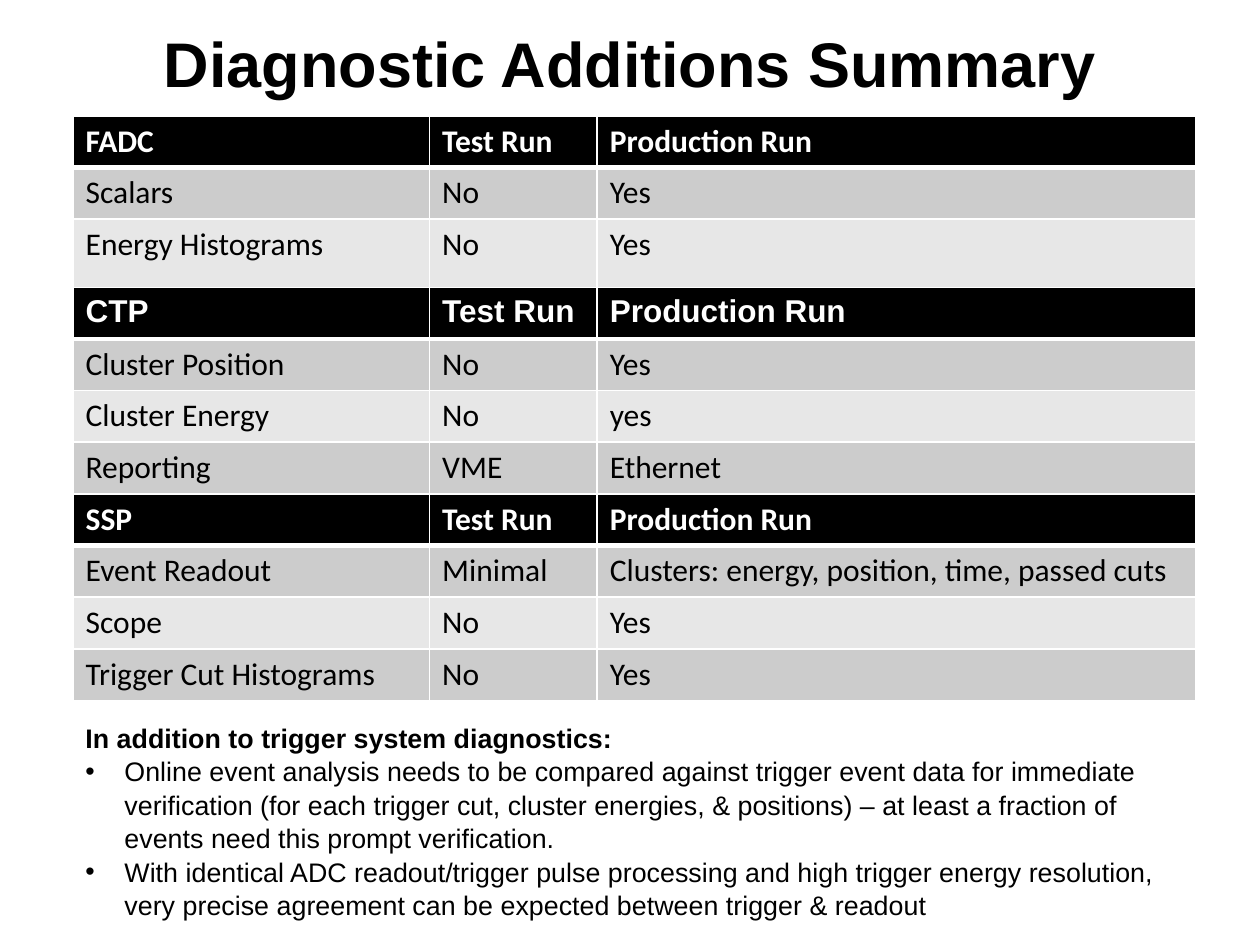
from pptx import Presentation
from pptx.dml.color import RGBColor
from pptx.enum import text
from pptx.oxml import parse_xml
from pptx.oxml.ns import nsdecls
from pptx.util import Inches, Pt

BLACK = RGBColor(0, 0, 0)
WHITE = RGBColor(255, 255, 255)
BANDS = [RGBColor(0xCC, 0xCC, 0xCC), RGBColor(0xE7, 0xE7, 0xE7)]

# Content
TITLE = "Diagnostic Additions Summary"
RUNS = ("Test Run", "Production Run")
# top, header font, last row height, rows
TABLES = [
    (0.92, "Calibri", 0.69, [
        ("FADC", *RUNS),
        ("Scalars", "No", "Yes"),
        ("Energy Histograms", "No", "Yes")]),
    (2.28, "Arial", 0.41, [
        ("CTP", *RUNS),
        ("Cluster Position", "No", "Yes"),
        ("Cluster Energy", "No", "yes"),
        ("Reporting", "VME", "Ethernet")]),
    (3.92, "Calibri", 0.41, [
        ("SSP", *RUNS),
        ("Event Readout", "Minimal", "Clusters: energy, position, time, passed cuts"),
        ("Scope", "No", "Yes"),
        ("Trigger Cut Histograms", "No", "Yes")]),
]
NOTE_HEAD = "In addition to trigger system diagnostics:"
NOTES = [
    "Online event analysis needs to be compared against trigger event data for "
    "immediate verification (for each trigger cut, cluster energies, & positions) "
    "– at least a fraction of events need this prompt verification.",
    "With identical ADC readout/trigger pulse processing and high trigger energy "
    "resolution, very precise agreement can be expected between trigger & readout",
]
LEFT = 0.58
COLS = [2.83, 1.33, 4.75]
ROW_H = 0.41


def style(font, name, size, color, bold):
    font.name, font.size, font.bold = name, Pt(size), bold
    font.color.rgb = color


def add_borders(cell, top, bottom):
    tcPr = cell._tc.get_or_add_tcPr()
    for side, width in (("L", 1), ("R", 1), ("T", top), ("B", bottom)):
        tcPr.append(parse_xml(
            f'<a:ln{side} {nsdecls("a")} w="{Pt(width)}"><a:solidFill>'
            f'<a:srgbClr val="{WHITE}"/></a:solidFill></a:ln{side}>'))


def add_summary_table(s, top, head_font, last_h, rows):
    heights = [ROW_H] * (len(rows) - 1) + [last_h]
    frame = s.shapes.add_table(len(rows), len(COLS), Inches(LEFT), Inches(top),
                               Inches(sum(COLS)), Inches(sum(heights)))
    table = frame.table
    for col, width in zip(table.columns, COLS):
        col.width = Inches(width)
    for i, values in enumerate(rows):
        table.rows[i].height = Inches(heights[i])
        head = i == 0
        for j, value in enumerate(values):
            cell = table.cell(i, j)
            # The thick rule lies between header and first data row
            add_borders(cell, 3 if i == 1 else 1, 3 if head else 1)
            cell.fill.solid()
            cell.fill.fore_color.rgb = BLACK if head else BANDS[(i - 1) % 2]
            cell.text_frame.text = value
            style(cell.text_frame.paragraphs[0].runs[0].font,
                  head_font if head else "Calibri", 18,
                  WHITE if head else BLACK, head)


def add_bullet(p):
    pPr = p._p.get_or_add_pPr()
    pPr.set("marL", str(Inches(0.31)))
    pPr.set("indent", str(Inches(-0.31)))
    pPr.append(parse_xml(f'<a:buFont {nsdecls("a")} typeface="Arial"/>'))
    pPr.append(parse_xml(f'<a:buChar {nsdecls("a")} char="•"/>'))


prs = Presentation()
prs.slide_width, prs.slide_height = Inches(10), Inches(7.5)
s = prs.slides.add_slide(prs.slide_layouts[5])

# Title
title = s.shapes.title
title.left, title.top = Inches(0.75), Inches(0.08)
title.width, title.height = Inches(8.5), Inches(0.83)
tf = title.text_frame
tf.text = TITLE
tf.vertical_anchor = text.MSO_ANCHOR.MIDDLE
tf.paragraphs[0].alignment = text.PP_ALIGN.CENTER
style(tf.paragraphs[0].runs[0].font, "Arial", 36, BLACK, True)

# Tables
for entry in TABLES:
    add_summary_table(s, *entry)

# Closing notes
tf = s.shapes.add_textbox(Inches(LEFT), Inches(5.67), Inches(8.83), Inches(1.33)).text_frame
tf.word_wrap = True
for i, line in enumerate([NOTE_HEAD, *NOTES]):
    p = tf.paragraphs[0] if i == 0 else tf.add_paragraph()
    p.text = line
    p.line_spacing = 1.04
    if i:
        add_bullet(p)
    style(p.runs[0].font, "Arial", 15.3, BLACK, i == 0)

prs.save("out.pptx")
